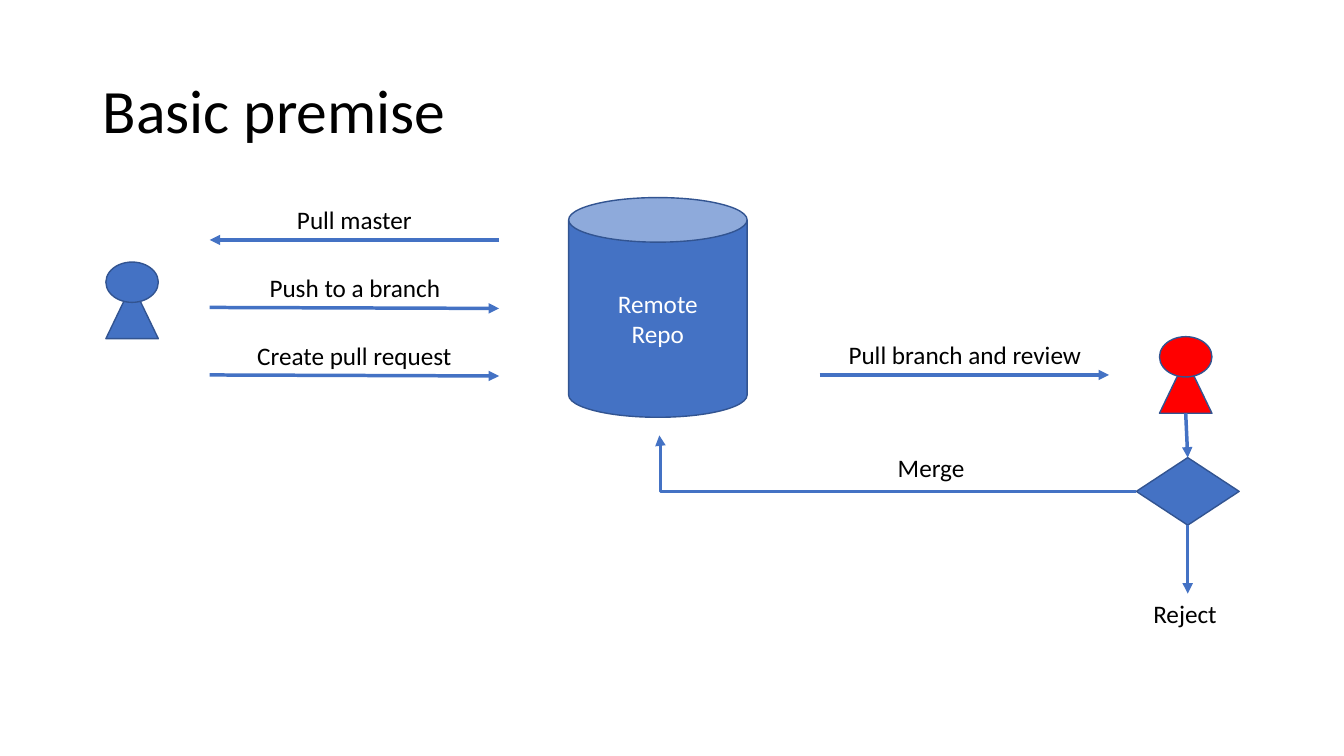
"""Build the slide showing how a change moves from author to reviewer and into the repo."""
from lxml import etree
from pptx import Presentation
from pptx import util as u
from pptx.dml.color import RGBColor
from pptx.enum import shapes, text
from pptx.oxml.ns import qn

PX = 9144
BLUE, RED, OUTLINE, BLACK, WHITE = "4472C4", "FF0000", "325491", "000000", "FFFFFF"
KIND, ALIGN, ANCHOR = shapes.MSO_SHAPE, text.PP_ALIGN, text.MSO_ANCHOR


def color(value):
    return RGBColor.from_string(value)


def write(shape, lines, size=18, ink=BLACK, align=ALIGN.CENTER, spacing=1.0, **frame_format):
    frame = shape.text_frame
    for name, value in frame_format.items():
        setattr(frame, name, value)
    frame.text = "\n".join(lines)
    for paragraph in frame.paragraphs:
        paragraph.alignment = align
        paragraph.line_spacing = spacing
        for name, value in {"size": u.Pt(size), "name": "Calibri"}.items():
            setattr(paragraph.font, name, value)
        paragraph.font.color.rgb = color(ink)


presentation = Presentation()
presentation.slide_width, presentation.slide_height = 1333 * PX, 750 * PX
slide = presentation.slides.add_slide(presentation.slide_layouts[6])

title = slide.shapes.add_textbox(92 * PX, 40 * PX, 1150 * PX, 145 * PX)
write(title, ["Basic premise"], 44, align=ALIGN.LEFT, spacing=0.9,
      word_wrap=True, vertical_anchor=ANCHOR.MIDDLE)

nodes = [("repo", KIND.CAN, 564, 196, 177, 218, BLUE)]
for person, left, top, fill in [("author", 105, 260, BLUE), ("reviewer", 1150, 334, RED)]:
    nodes += [(person + " body", KIND.ISOSCELES_TRIANGLE, left, top + 22, 52, 54, fill),
              (person + " head", KIND.OVAL, left, top, 52, 40, fill)]
nodes.append(("decision", KIND.FLOWCHART_DECISION, 1127, 454, 102, 67, BLUE))

drawn = {}
for name, kind, left, top, width, height, fill in nodes:
    shape = slide.shapes.add_shape(kind, left * PX, top * PX, width * PX, height * PX)
    shape.shadow.inherit = False
    shape.fill.solid()
    shape.fill.fore_color.rgb = color(fill)
    shape.line.color.rgb = color(OUTLINE)
    shape.line.width = u.Pt(1)
    drawn[name] = shape
write(drawn["repo"], ["Remote", "Repo"], ink=WHITE, vertical_anchor=ANCHOR.MIDDLE)

decision = drawn["decision"]
STRAIGHT, ELBOW = shapes.MSO_CONNECTOR.STRAIGHT, shapes.MSO_CONNECTOR.ELBOW
arrows = [
    (STRAIGHT, 495, 238, 208, 238, None, None),
    (STRAIGHT, 208, 305, 495, 306, None, None),
    (STRAIGHT, 208, 372, 495, 373, None, None),
    (STRAIGHT, 813, 372, 1100, 372, None, None),
    (STRAIGHT, 1176, 410, 1178, 454, None, 0),
    (STRAIGHT, 1178, 521, 1178, 589, 2, None),
    (ELBOW, 1127, 488, 654, 432, 1, None),
]
for kind, x1, y1, x2, y2, begin_side, end_side in arrows:
    arrow = slide.shapes.add_connector(kind, x1 * PX, y1 * PX, x2 * PX, y2 * PX)
    if begin_side is not None:
        arrow.begin_connect(decision, begin_side)
    if end_side is not None:
        arrow.end_connect(decision, end_side)
    arrow.line.color.rgb = color(BLUE)
    arrow.line.width = u.Pt(2.5)
    properties = arrow.line._get_or_add_ln()
    etree.SubElement(properties, qn("a:tailEnd"), type="triangle")
    etree.SubElement(arrow._element.spPr, qn("a:effectLst"))
    if kind == ELBOW:
        guides = arrow._element.spPr.find(qn("a:prstGeom")).find(qn("a:avLst"))
        etree.SubElement(guides, qn("a:gd"), name="adj1", fmla="val 99800")

labels = [
    ("Pull master", 284, 198, 135, ALIGN.CENTER),
    ("Push to a branch", 256, 265, 192, ALIGN.CENTER),
    ("Create pull request", 244, 333, 215, ALIGN.CENTER),
    ("Pull branch and review", 830, 332, 254, ALIGN.CENTER),
    ("Merge", 880, 444, 87, ALIGN.CENTER),
    ("Reject", 1134, 589, 84, ALIGN.LEFT),
]
for caption, left, top, width, align in labels:
    label = slide.shapes.add_textbox(left * PX, top * PX, width * PX, 40 * PX)
    write(label, [caption], align=align, word_wrap=False,
          auto_size=text.MSO_AUTO_SIZE.SHAPE_TO_FIT_TEXT)

presentation.save("out.pptx")
